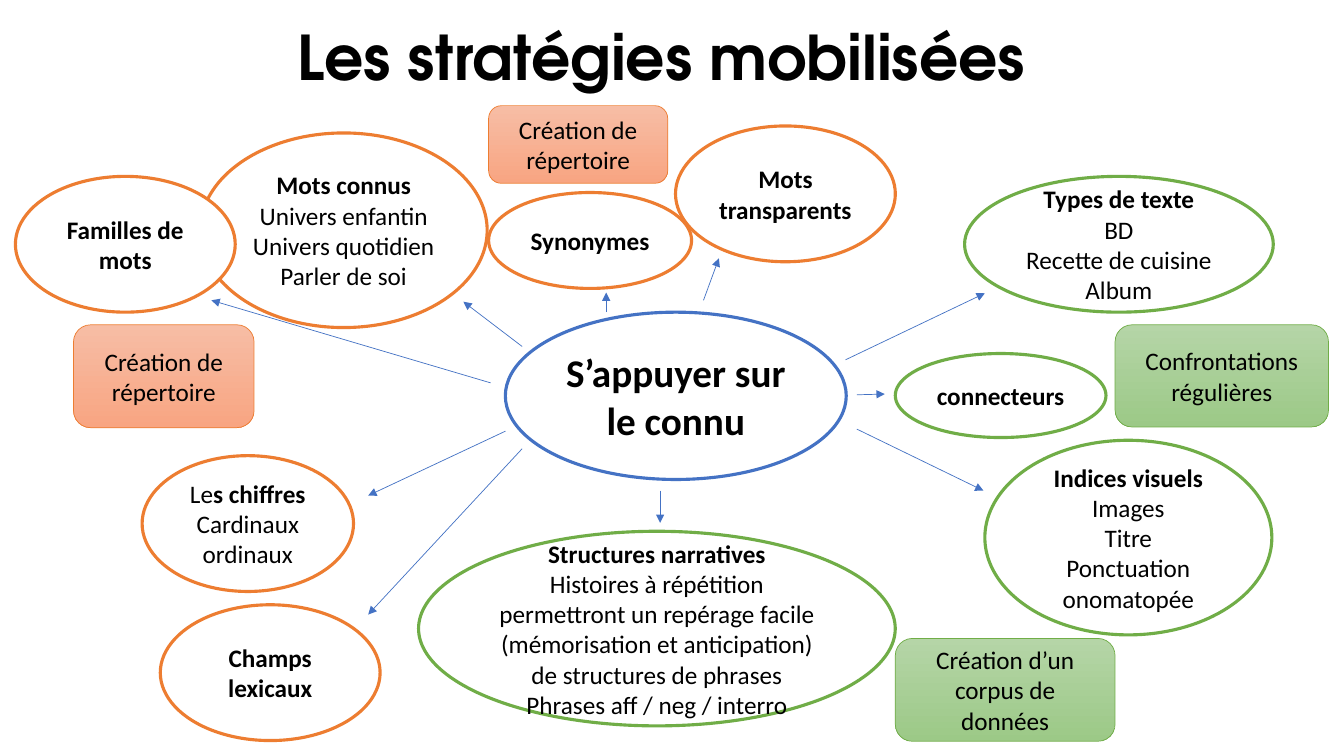
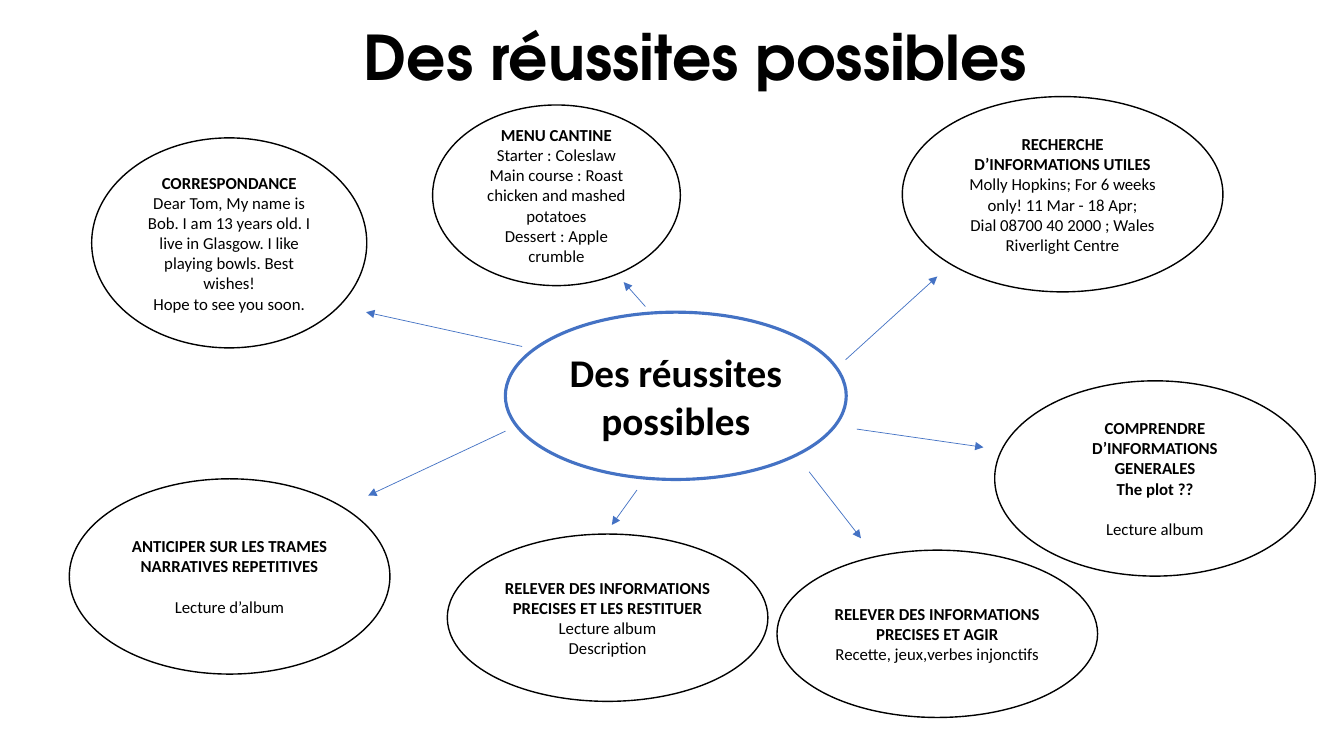
"""Builds two mind-map slides on reading strategies and possible successes."""
from pptx import Presentation
from pptx.dml.color import RGBColor
from pptx.enum.shapes import MSO_CONNECTOR, MSO_SHAPE
from pptx.enum.text import MSO_ANCHOR, MSO_AUTO_SIZE, PP_ALIGN
from pptx.oxml.ns import qn
from pptx.util import Pt
from lxml.etree import SubElement

COLORS = {
    "ink": "000000", "paper": "FFFFFF",
    "blue": "4472C4", "orange": "ED7D31", "green": "70AD47",
}
TAG_GRADIENTS = {"orange": ("F7BDA5", "F8A582"), "green": ("B5D5A7", "9CC987")}
BODY_FONT, TITLE_FONT = "Calibri", "TeX Gyre Adventor"
SLIDE_SIZE = (960, 540)
HUB_BOX = (361, 223, 243.5, 119.5)
OVAL, ROUND, WIDE, FLAT = (157, 97), (205, 139), (229, 139.5), (229, 119.5)
TITLE_CENTER, TITLE_HEIGHT = 43, 60
LINE_GAP = 14.65

STRATEGIES = {
    "title": ("Les stratégies mobilisées", 205, 560),
    "hub": "S’appuyer sur le connu",
    "size": 18,
    "outline": 2.25,
    "ideas": [
        ("orange", (101.5, 325.5), (151, 97), ["Le*s chiffres*", "Cardinaux", "ordinaux"]),
        ("orange", (143, 95), ROUND,
         ["*Mots connus*", "Univers enfantin", "Univers quotidien", "Parler de soi"]),
        ("orange", (482.5, 90), OVAL, ["*Mots transparents*"]),
        ("green", (689, 126), (220.5, 97),
         ["*Types de texte*", "BD", "Recette de cuisine", "Album"]),
        ("green", (703.5, 314.5), ROUND,
         ["*Indices visuels*", "Images", "Titre", "Ponctuation", "onomatopée"]),
        ("green", (299, 379.5), (340.5, 139),
         ["*Structures narratives*",
          "Histoires à répétition permettront un repérage facile "
          "(mémorisation et anticipation) de structures de phrases",
          "Phrases aff / neg / interro"]),
        ("orange", (114.5, 432), OVAL, ["*Champs lexicaux*"]),
        ("orange", (11, 126), OVAL, ["*Familles de mots*"]),
        ("orange", (349, 137.5), (145, 68.5), ["*Synonymes*"]),
        ("green", (639.5, 252.5), (150.5, 60), ["*connecteurs*"]),
    ],
    "tags": [
        ("orange", (52.5, 232), (129, 73.5), ["Création de répertoire"]),
        ("orange", (349, 75.5), (128, 55.5), ["Création de répertoire"]),
        ("green", (796.5, 232), (152.5, 73), ["Confrontations", "régulières"]),
        ("green", (639.5, 456), (157, 73.5), ["Création d’un corpus de données"]),
    ],
    "arrows": [
        (373, 247.5, 331, 215.5), (502.5, 214.5, 513.5, 184.5),
        (604, 257, 703.5, 209.5), (612, 306.5, 702.5, 350.5),
        (471.5, 350.5, 471.5, 373.5), (361, 308, 263, 354),
        (612, 282, 632, 281.5), (350.5, 273.5, 151, 214.5),
        (373, 320.5, 263, 439), (433, 223, 433, 209),
    ],
}
SUCCESSES = {
    "title": ("Des réussites possibles", 252.5, 565),
    "hub": "Des réussites possibles",
    "size": 12,
    "outline": 1,
    "ideas": [
        ("ink", (65.5, 98.5), (196.5, 150),
         ["*CORRESPONDANCE*", "Dear Tom, My name is", "Bob. I am 13 years old. I",
          "live in Glasgow. I like", "playing bowls. Best wishes!", "Hope to see you soon."]),
        ("ink", (309, 75), (177, 129),
         ["*MENU CANTINE*", "Starter : Coleslaw", "Main course : Roast",
          "chicken and mashed", "potatoes", "Dessert : Apple crumble"]),
        ("ink", (644.5, 69), WIDE,
         ["*RECHERCHE D’INFORMATIONS UTILES*", "Molly Hopkins; For 6 weeks",
          "only! 11 Mar - 18 Apr;", "Dial 08700 40 2000 ; Wales", "Riverlight Centre"]),
        ("ink", (710.5, 272), WIDE,
         ["*COMPRENDRE D’INFORMATIONS GENERALES*", "*The plot ??*",
          ("Lecture album", LINE_GAP)]),
        ("ink", (319.5, 381.5), FLAT,
         ["*RELEVER DES INFORMATIONS PRECISES ET LES RESTITUER*",
          "Lecture album", "Description"]),
        ("ink", (49.5, 342), WIDE,
         ["*ANTICIPER SUR LES TRAMES NARRATIVES REPETITIVES*",
          ("Lecture d’album", LINE_GAP)]),
        ("ink", (555, 393), FLAT,
         ["*RELEVER DES INFORMATIONS PRECISES ET AGIR*", "Recette, jeux,verbes injonctifs"]),
    ],
    "tags": [],
    "arrows": [
        (373, 247.5, 261.5, 223), (461, 219, 445.5, 201.5),
        (604, 257, 669.5, 197.5), (612, 306.5, 702.5, 319.5),
        (455, 350, 437, 375), (361, 308, 263, 354), (578, 337, 615, 384.5),
    ],
}


def color(name):
    return RGBColor.from_string(COLORS.get(name, name))


def write_text(frame, lines, size=18, font=BODY_FONT, align=PP_ALIGN.CENTER, spacing=1.0):
    """Fills a frame; asterisks enclose bold words, a pair adds space before."""
    frame.word_wrap = True
    frame.auto_size = MSO_AUTO_SIZE.NONE
    frame.vertical_anchor = MSO_ANCHOR.MIDDLE
    for index, line in enumerate(lines):
        words, gap = line if isinstance(line, tuple) else (line, 0)
        paragraph = frame.paragraphs[0] if index == 0 else frame.add_paragraph()
        paragraph.alignment = align
        paragraph.line_spacing = spacing
        paragraph.space_before = Pt(gap)
        for part, piece in enumerate(words.split("*")):
            if piece:
                run = paragraph.add_run()
                run.text = piece
                run.font.name = font
                run.font.size = Pt(size)
                run.font.bold = part % 2 == 1
                run.font.color.rgb = color("ink")


def add_bubble(slide, kind, box, lines, line_color, width, size, gradient=None):
    bubble = slide.shapes.add_shape(kind, *map(Pt, box))
    bubble.shadow.inherit = False
    if gradient:
        bubble.fill.gradient()
        bubble.fill.gradient_angle = 270
        for stop, shade in zip(bubble.fill.gradient_stops, gradient):
            stop.color.rgb = color(shade)
    else:
        bubble.fill.solid()
        bubble.fill.fore_color.rgb = color("paper")
    bubble.line.color.rgb = color(line_color)
    bubble.line.width = Pt(width)
    write_text(bubble.text_frame, lines, size=size)


def add_arrow(slide, ends):
    arrow = slide.shapes.add_connector(MSO_CONNECTOR.STRAIGHT, *map(Pt, ends))
    arrow.line.color.rgb = color("blue")
    arrow.line.width = Pt(0.5)
    SubElement(arrow.line._get_or_add_ln(), qn("a:tailEnd"), type="triangle")
    SubElement(arrow._element.spPr, qn("a:effectLst"))


def add_title(slide, words, left, width):
    title = slide.shapes.title
    title.left, title.top = Pt(left), Pt(TITLE_CENTER - TITLE_HEIGHT / 2)
    title.width, title.height = Pt(width), Pt(TITLE_HEIGHT)
    write_text(title.text_frame, [f"*{words}*"], size=44, font=TITLE_FONT,
               align=PP_ALIGN.LEFT, spacing=0.9)


def build_map(deck, content):
    slide = deck.slides.add_slide(deck.slide_layouts[5])
    add_title(slide, *content["title"])
    add_bubble(slide, MSO_SHAPE.OVAL, HUB_BOX, [f"*{content['hub']}*"], "blue", 2.25, 28)
    for hue, corner, extent, lines in content["ideas"]:
        add_bubble(slide, MSO_SHAPE.OVAL, corner + extent, lines, hue,
                   content["outline"], content["size"])
    for hue, corner, extent, lines in content["tags"]:
        add_bubble(slide, MSO_SHAPE.ROUNDED_RECTANGLE, corner + extent, lines, hue,
                   0.5, content["size"], gradient=TAG_GRADIENTS[hue])
    for ends in content["arrows"]:
        add_arrow(slide, ends)


def main():
    deck = Presentation()
    deck.slide_width, deck.slide_height = map(Pt, SLIDE_SIZE)
    for content in (STRATEGIES, SUCCESSES):
        build_map(deck, content)
    deck.save("out.pptx")


if __name__ == "__main__":
    main()
